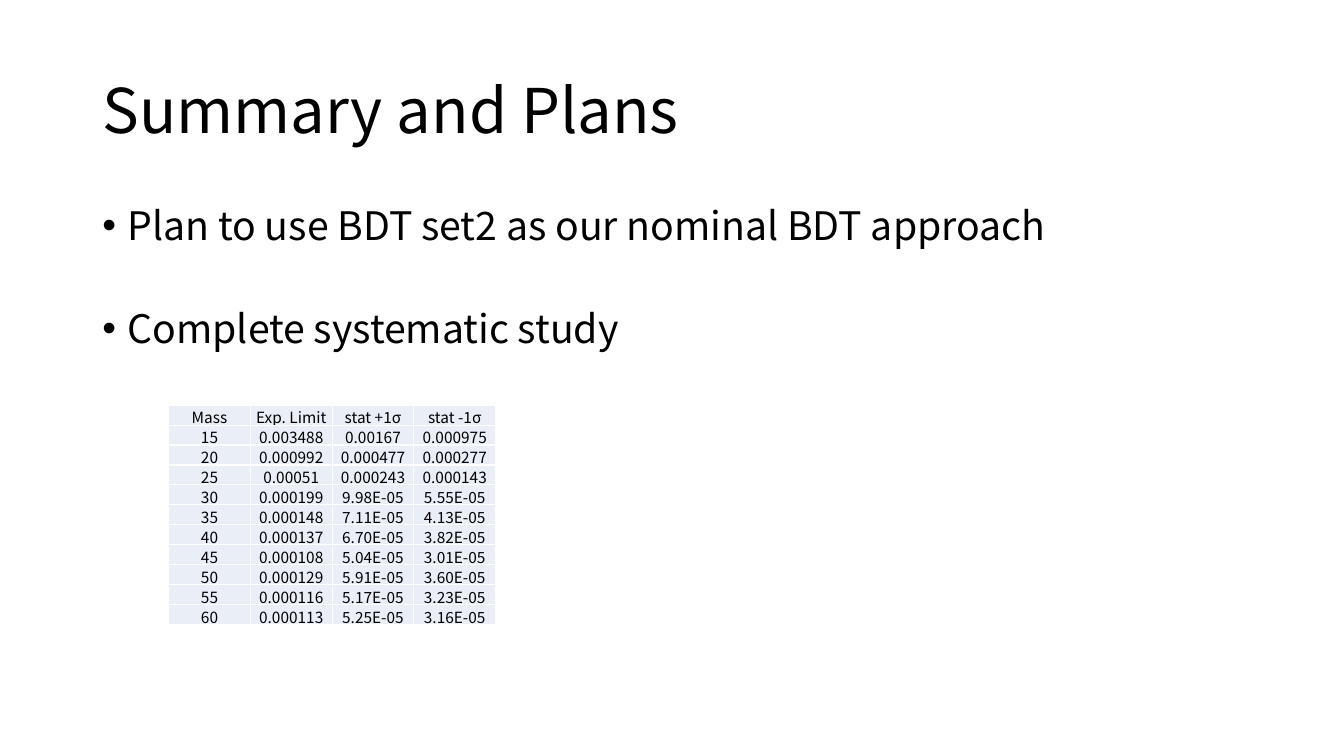
from pptx import Presentation
from pptx.dml.color import RGBColor
from pptx.enum.text import MSO_ANCHOR as Anchor, PP_ALIGN as Align
from pptx.oxml import parse_xml
from pptx.oxml.ns import nsdecls
from pptx.util import Cm, Pt

FONT = "Noto Sans CJK SC"
INK, PALE, RULE = "000000", "EAEFF7", "FFFFFF"

POINTS = [
    "Plan to use BDT set2 as our nominal BDT approach",
    "Complete systematic study",
]
LIMITS = [
    ("Mass", "Exp. Limit", "stat +1σ", "stat -1σ"),
    ("15", "0.003488", "0.00167", "0.000975"),
    ("20", "0.000992", "0.000477", "0.000277"),
    ("25", "0.00051", "0.000243", "0.000143"),
    ("30", "0.000199", "9.98E-05", "5.55E-05"),
    ("35", "0.000148", "7.11E-05", "4.13E-05"),
    ("40", "0.000137", "6.70E-05", "3.82E-05"),
    ("45", "0.000108", "5.04E-05", "3.01E-05"),
    ("50", "0.000129", "5.91E-05", "3.60E-05"),
    ("55", "0.000116", "5.17E-05", "3.23E-05"),
    ("60", "0.000113", "5.25E-05", "3.16E-05"),
]


def color(code):
    return RGBColor.from_string(code)


def write(para, text, size):
    run = para.add_run()
    run.text = text
    font = run.font
    font.name, font.size = FONT, Pt(size)
    font.color.rgb = color(INK)


def place(shape, box):
    shape.left, shape.top, shape.width, shape.height = map(Cm, box)


# Title
def add_title(slide, box):
    title = slide.shapes.title
    place(title, box)
    frame = title.text_frame
    frame.vertical_anchor = Anchor.MIDDLE
    para = frame.paragraphs[0]
    para.alignment, para.line_spacing = Align.LEFT, 0.9
    write(para, "Summary and Plans", 44)


# Bullet list
def add_points(slide, box):
    frame = slide.shapes.add_textbox(*map(Cm, box)).text_frame
    frame.word_wrap = True
    for i, text in enumerate(POINTS):
        para = frame.add_paragraph() if i else frame.paragraphs[0]
        props = para._p.get_or_add_pPr()
        props.set("marL", str(Cm(0.64)))
        props.set("indent", str(-Cm(0.64)))
        props.append(parse_xml(f'<a:buFont {nsdecls("a")} typeface="Arial"/>'))
        props.append(parse_xml(f'<a:buChar {nsdecls("a")} char="•"/>'))
        para.line_spacing = 0.9
        if i:
            para.space_before = Pt(43.5)
        write(para, text, 28)


# Table cell
def fill_cell(cell, text):
    cell.fill.solid()
    cell.fill.fore_color.rgb = color(PALE)
    cell.vertical_anchor = Anchor.MIDDLE
    cell.margin_left = cell.margin_right = cell.margin_top = Cm(0.02)
    cell.margin_bottom = 0
    para = cell.text_frame.paragraphs[0]
    para.alignment = Align.CENTER
    write(para, text, 11)
    props = cell._tc.get_or_add_tcPr()
    for i, side in enumerate(("lnL", "lnR", "lnT", "lnB")):
        props.insert(i, parse_xml(
            f'<a:{side} {nsdecls("a")} w="{Pt(1)}"><a:solidFill>'
            f'<a:srgbClr val="{RULE}"/></a:solidFill></a:{side}>'))


# Table of limits
def add_limits(slide, box):
    rows, cols = len(LIMITS), len(LIMITS[0])
    table = slide.shapes.add_table(rows, cols, *map(Cm, box)).table
    table.first_row = table.horz_banding = False
    for row, line in zip(table.rows, LIMITS):
        for cell, text in zip(row.cells, line):
            fill_cell(cell, text)


def main():
    deck = Presentation()
    deck.slide_width, deck.slide_height = Cm(33.87), Cm(19.05)
    slide = deck.slides.add_slide(deck.slide_layouts[5])
    add_title(slide, (2.33, 1.01, 29.21, 3.68))
    add_points(slide, (2.33, 5.07, 29.21, 12.09))
    add_limits(slide, (4.25, 10.21, 8.24, 5.53))
    deck.save("out.pptx")


if __name__ == "__main__":
    main()
